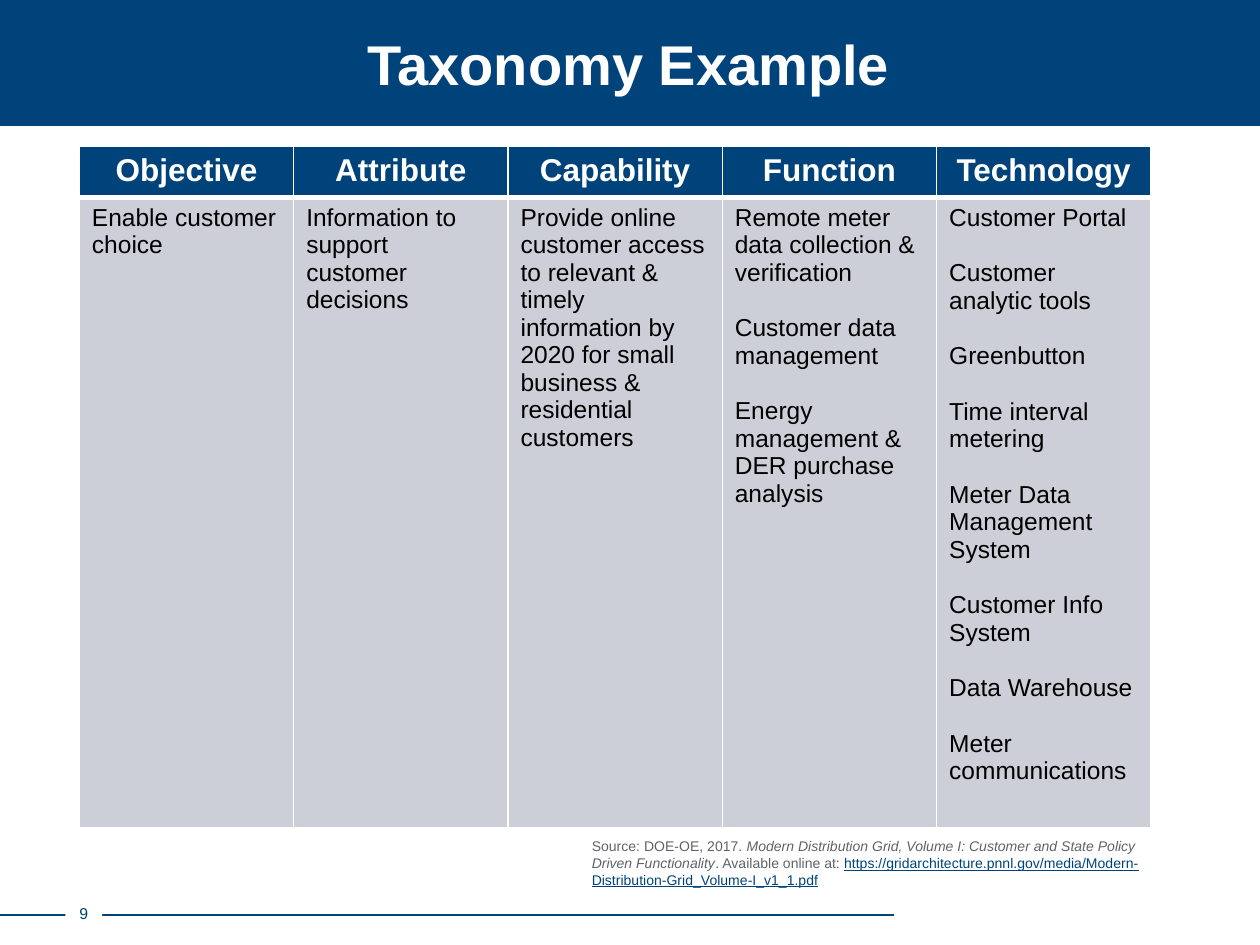
from dataclasses import dataclass

from lxml import etree
from pptx import Presentation
from pptx.dml.color import RGBColor
from pptx.enum.shapes import MSO_CONNECTOR, MSO_SHAPE
from pptx.enum.text import MSO_ANCHOR, PP_ALIGN
from pptx.oxml.ns import qn
from pptx.util import Cm, Pt

CENTER = PP_ALIGN.CENTER
LEFT = PP_ALIGN.LEFT
MIDDLE = MSO_ANCHOR.MIDDLE
RECTANGLE = MSO_SHAPE.RECTANGLE
STRAIGHT = MSO_CONNECTOR.STRAIGHT
TITLE_ONLY = 5


@dataclass(frozen=True)
class Theme:
    font: str = "Arial"
    navy: str = "00437B"
    number: str = "00446A"
    white: str = "FFFFFF"
    black: str = "000000"
    cell: str = "CCCFD7"
    grey: str = "5F6369"
    title_size: int = 32
    header_size: int = 18
    body_size: int = 14
    number_size: int = 9
    source_size: int = 8
    paragraph_gap: int = 16


class SlideBuilder:
    def __init__(self, deck, theme):
        self.theme = theme
        self.page = deck.slides.add_slide(deck.slide_layouts[TITLE_ONLY])

    def style(self, font, size, color, bold=False, italic=False, underline=False):
        font.name = self.theme.font
        font.size = Pt(size)
        font.bold = bold
        font.italic = italic
        font.underline = underline
        font.color.rgb = RGBColor.from_string(color)

    def rectangle(self, left, top, width, height, color):
        box = self.page.shapes.add_shape(
            RECTANGLE, Cm(left), Cm(top), Cm(width), Cm(height))
        box.shadow.inherit = False
        box.fill.solid()
        box.fill.fore_color.rgb = RGBColor.from_string(color)
        box.line.fill.background()
        return box

    def title(self, text, left, top, width, height):
        box = self.page.shapes.title
        box.left, box.top = Cm(left), Cm(top)
        box.width, box.height = Cm(width), Cm(height)
        frame = box.text_frame
        frame.text = text
        frame.vertical_anchor = MIDDLE
        para = frame.paragraphs[0]
        para.alignment = CENTER
        self.style(para.runs[0].font, self.theme.title_size, self.theme.white, bold=True)
        # The title comes first in the page, so bring it above the band.
        self.page.shapes.element.append(box.element)

    def rule(self, left, right, y):
        line = self.page.shapes.add_connector(STRAIGHT, Cm(left), Cm(y), Cm(right), Cm(y))
        line.line.color.rgb = RGBColor.from_string(self.theme.navy)
        line.line.width = Pt(1)
        etree.SubElement(line.element.spPr, qn("a:effectLst"))

    def page_number(self, text, left, top, width, height):
        box = self.rectangle(left, top, width, height, self.theme.white)
        frame = box.text_frame
        frame.margin_left = frame.margin_right = 0
        frame.margin_top = frame.margin_bottom = 0
        frame.vertical_anchor = MIDDLE
        frame.text = text
        para = frame.paragraphs[0]
        para.alignment = CENTER
        self.style(para.runs[0].font, self.theme.number_size, self.theme.number)

    def source(self, spans, left, top, width, height):
        """Write one paragraph from (text, color, font options) spans."""
        box = self.page.shapes.add_textbox(Cm(left), Cm(top), Cm(width), Cm(height))
        box.text_frame.word_wrap = True
        para = box.text_frame.paragraphs[0]
        for text, color, options in spans:
            span = para.add_run()
            span.text = text
            self.style(span.font, self.theme.source_size, color, **options)

    def cell_borders(self, cell, widths):
        """Draw white borders; widths maps an edge letter to points."""
        properties = cell._tc.get_or_add_tcPr()
        for position, (edge, width) in enumerate(widths.items()):
            border = etree.Element(qn(f"a:ln{edge}"), w=str(Pt(width)))
            fill = etree.SubElement(border, qn("a:solidFill"))
            etree.SubElement(fill, qn("a:srgbClr"), val=self.theme.white)
            properties.insert(position, border)

    def cell(self, cell, paragraphs, fill, size, color, bold, align, borders):
        cell.fill.solid()
        cell.fill.fore_color.rgb = RGBColor.from_string(fill)
        self.cell_borders(cell, borders)
        cell.text_frame.text = "\n".join(paragraphs)
        for index, para in enumerate(cell.text_frame.paragraphs):
            para.alignment = align
            if index:
                para.space_before = Pt(self.theme.paragraph_gap)
            self.style(para.runs[0].font, size, color, bold=bold)

    def table(self, columns, left, top, column_width, row_heights):
        """Build a header row and one body row from {header: paragraphs}."""
        theme = self.theme
        grid = self.page.shapes.add_table(
            2, len(columns), Cm(left), Cm(top),
            Cm(column_width * len(columns)), Cm(sum(row_heights))).table
        for row, height in zip(grid.rows, row_heights):
            row.height = Cm(height)
        for index, (header, paragraphs) in enumerate(columns.items()):
            grid.columns[index].width = Cm(column_width)
            self.cell(grid.cell(0, index), [header], theme.navy, theme.header_size,
                      theme.white, True, CENTER, {"L": 1, "R": 1, "T": 1, "B": 3})
            self.cell(grid.cell(1, index), paragraphs, theme.cell, theme.body_size,
                      theme.black, False, LEFT, {"L": 1, "R": 1, "T": 3, "B": 1})


COLUMNS = {
    "Objective": ["Enable customer choice"],
    "Attribute": ["Information to support customer decisions"],
    "Capability": [
        "Provide online customer access to relevant & timely information "
        "by 2020 for small business & residential customers",
    ],
    "Function": [
        "Remote meter data collection & verification",
        "Customer data management",
        "Energy management & DER purchase analysis",
    ],
    "Technology": [
        "Customer Portal",
        "Customer analytic tools",
        "Greenbutton",
        "Time interval metering",
        "Meter Data Management System",
        "Customer Info System",
        "Data Warehouse",
        "Meter communications",
    ],
}


def main():
    theme = Theme()
    deck = Presentation()
    deck.slide_width, deck.slide_height = Cm(25.4), Cm(19.05)
    builder = SlideBuilder(deck, theme)

    builder.rectangle(0, 0, 25.4, 2.54, theme.navy)
    builder.rule(0, 18.03, 18.44)
    builder.page_number("9", 1.32, 18.08, 0.74, 0.64)
    builder.title("Taxonomy Example", 1.24, 0.38, 22.86, 1.78)
    builder.source([
        ("Source: DOE-OE, 2017. ", theme.grey, {}),
        ("Modern Distribution Grid, Volume I: Customer and State Policy "
         "Driven Functionality", theme.grey, {"italic": True}),
        (". Available online at: ", theme.grey, {}),
        ("https://gridarchitecture.pnnl.gov/media/"
         "Modern-Distribution-Grid_Volume-I_v1_1.pdf", theme.navy, {"underline": True}),
    ], 11.68, 16.76, 12.22, 1.27)
    builder.table(COLUMNS, 1.6, 2.95, 4.32, (1.03, 12.7))
    deck.save("out.pptx")


if __name__ == "__main__":
    main()
